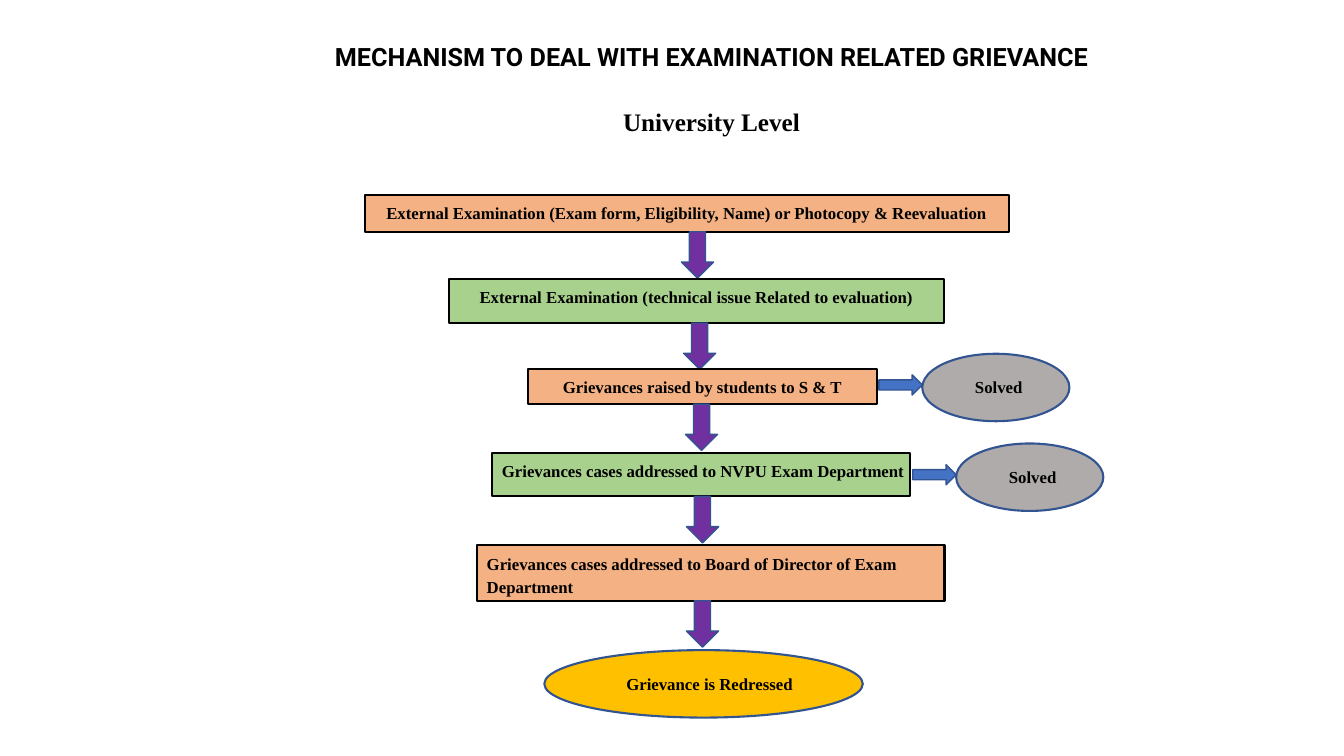
from dataclasses import dataclass
from typing import Optional

from pptx import Presentation
from pptx.dml.color import RGBColor
from pptx.enum.shapes import MSO_SHAPE as Preset
from pptx.enum.text import MSO_ANCHOR as Anchor, MSO_AUTO_SIZE as AutoSize, PP_ALIGN as Align
from pptx.util import Pt


@dataclass(frozen=True)
class Theme:
    black: str = "000000"
    orange: str = "F4B183"
    green: str = "A9D18E"
    gray: str = "AFABAB"
    gold: str = "FFC000"
    purple: str = "7030A0"
    blue: str = "4472C4"
    outline: str = "325491"
    title_font: str = "Roboto"
    body_font: str = "Times New Roman"
    heading_size: float = 18
    step_size: float = 12
    thin: float = 1
    thick: float = 1.5


@dataclass(frozen=True)
class Frame:
    left: float
    top: float
    width: float
    height: float

    @property
    def bottom(self) -> float:
        return self.top + self.height

    def inset(self, across: float, down: float, width: float, height: float) -> "Frame":
        return Frame(self.left + across, self.top + down, width, height)

    def lengths(self) -> list:
        return [Pt(value) for value in (self.left, self.top, self.width, self.height)]


@dataclass(frozen=True)
class Step:
    text: str
    frame: Frame
    fill: str
    arrow_left: float
    align: Align = Align.CENTER
    solved: Optional[Frame] = None


THEME = Theme()

STEPS = [
    Step("External Examination (Exam form, Eligibility, Name) or Photocopy & Reevaluation",
         Frame(260.6, 139, 460.1, 26.6), THEME.orange, 486.7),
    Step("External Examination (technical issue Related to evaluation)",
         Frame(320.4, 199.4, 354.2, 31.3), THEME.green, 488.2),
    Step("Grievances raised by students to S & T",
         Frame(377.3, 263.5, 249.1, 25.2), THEME.orange, 489.6,
         solved=Frame(658.8, 252.7, 105.1, 48.2)),
    Step("Grievances cases addressed to NVPU Exam Department",
         Frame(351.4, 323.3, 298.8, 31.3), THEME.green, 490.3, Align.LEFT,
         solved=Frame(683, 316.8, 105.1, 48.2)),
    Step("Grievances cases addressed to Board of Director of Exam Department",
         Frame(340.6, 389.5, 334.1, 39.6), THEME.orange, 490.3, Align.LEFT),
]
REDRESSED = Frame(388.8, 464.4, 227.5, 48.2)


def write_text(box, text: str, font: str, size: float, align: Align) -> None:
    text_frame = box.text_frame
    text_frame.text = text
    text_frame.word_wrap = True
    text_frame.vertical_anchor = Anchor.TOP
    para = text_frame.paragraphs[0]
    para.alignment = align
    para.line_spacing = 1.15
    para.space_before = Pt(0)
    para.space_after = Pt(10)
    span = para.runs[0].font
    span.name, span.size, span.bold = font, Pt(size), True
    span.color.rgb = RGBColor.from_string(THEME.black)


def format_heading(box, text: str, frame: Frame, font: str, align: Align) -> None:
    box.left, box.top, box.width, box.height = frame.lengths()
    write_text(box, text, font, THEME.heading_size, align)
    box.text_frame.auto_size = AutoSize.SHAPE_TO_FIT_TEXT
    properties = box.text_frame.paragraphs[0]._p.get_or_add_pPr()
    properties.set("marL", str(Pt(36)))
    properties.set("indent", "0")


def draw_shape(page, preset: Preset, frame: Frame, fill: str,
               line: Optional[str] = None, weight: float = THEME.thin):
    shape = page.shapes.add_shape(preset, *frame.lengths())
    shape.shadow.inherit = False
    shape.fill.solid()
    shape.fill.fore_color.rgb = RGBColor.from_string(fill)
    if line is None:
        shape.line.fill.background()
    else:
        shape.line.color.rgb = RGBColor.from_string(line)
        shape.line.width = Pt(weight)
    return shape


def draw_outcome(page, text: str, oval: Frame, label: Frame, fill: str) -> None:
    draw_shape(page, Preset.OVAL, oval, fill, THEME.outline, THEME.thick)
    box = draw_shape(page, Preset.RECTANGLE, label, fill)
    write_text(box, text, THEME.body_font, THEME.step_size, Align.CENTER)


def draw_step(page, step: Step) -> None:
    box = draw_shape(page, Preset.RECTANGLE, step.frame, step.fill, THEME.black, THEME.thick)
    write_text(box, step.text, THEME.body_font, THEME.step_size, step.align)
    if step.align == Align.LEFT:
        # Leave left-aligned lines room up to the box edge
        box.text_frame.margin_right = Pt(1)
    if step.solved:
        draw_outcome(page, "Solved", step.solved,
                     step.solved.inset(16.5, 10.8, 76.3, 25.2), THEME.gray)
        draw_shape(page, Preset.RIGHT_ARROW, step.solved.inset(-31, 15.1, 31, 14.4),
                   THEME.blue, THEME.outline)
    draw_shape(page, Preset.DOWN_ARROW, Frame(step.arrow_left, step.frame.bottom, 23, 33.1),
               THEME.purple, THEME.outline)


def main() -> None:
    deck = Presentation()
    deck.slide_width, deck.slide_height = Pt(960), Pt(540)
    page = deck.slides.add_slide(deck.slide_layouts[0])

    # Headings
    format_heading(page.shapes.title, "MECHANISM TO DEAL WITH EXAMINATION RELATED GRIEVANCE",
                   Frame(177.1, 23, 626.4, 31.7), THEME.title_font, Align.CENTER)
    format_heading(page.placeholders[1], "University Level",
                   Frame(401.8, 69.1, 177.8, 31), THEME.body_font, Align.LEFT)

    # Escalation steps with their arrows and outcomes
    for step in STEPS:
        draw_step(page, step)

    # Final outcome
    draw_outcome(page, "Grievance is Redressed", REDRESSED,
                 REDRESSED.inset(32.4, 11.5, 171.4, 23.8), THEME.gold)

    deck.save("out.pptx")


if __name__ == "__main__":
    main()
